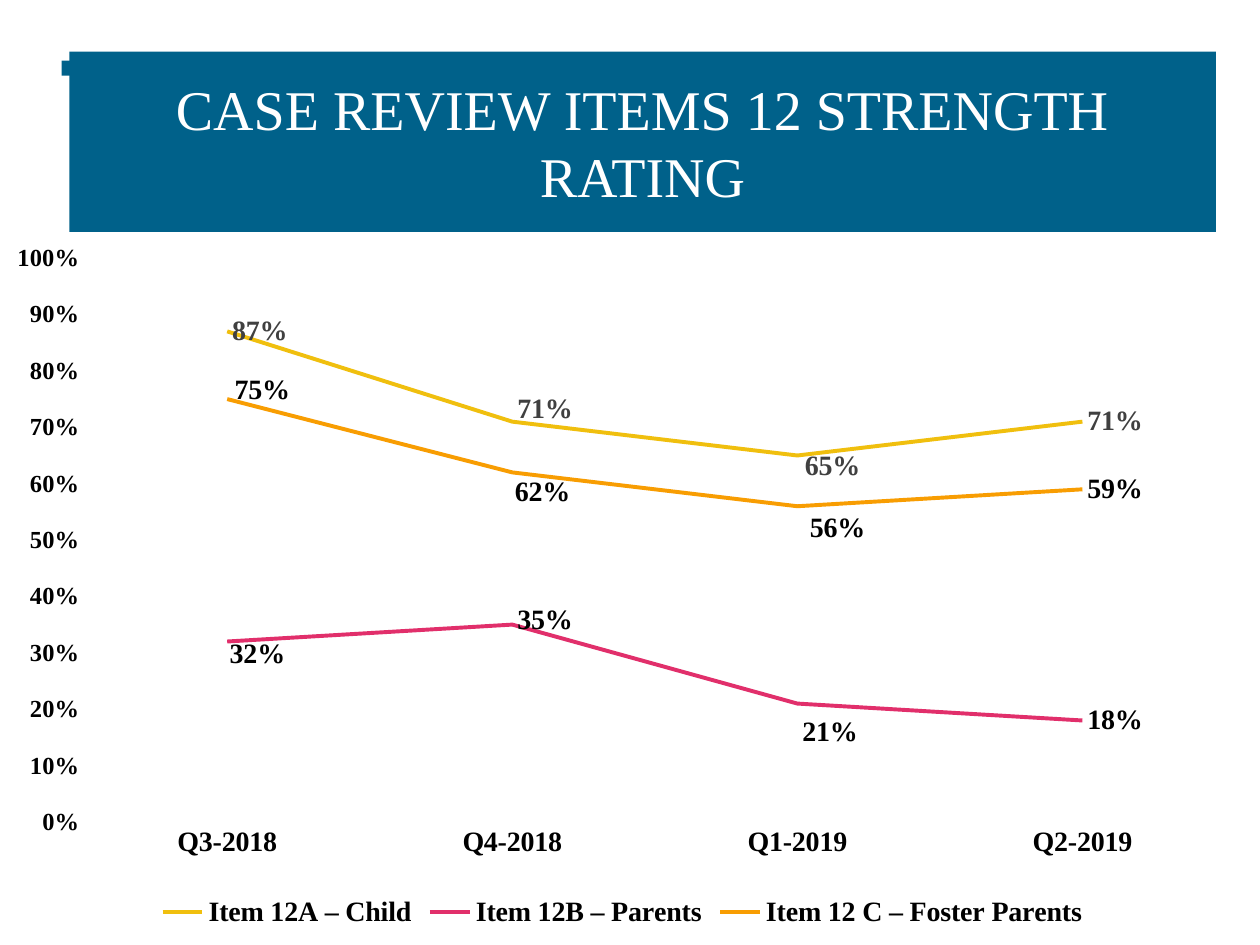
import lxml.etree
import pptx
import pptx.chart.data
import pptx.dml.color
import pptx.enum.chart
import pptx.enum.shapes
import pptx.enum.text
import pptx.oxml.ns
import pptx.util

Pt = pptx.util.Pt

THEME = {
    "font": "Times New Roman", "base_font": "Calibri",
    "banner": "00618A", "white": "FFFFFF", "black": "000000", "grey": "404040",
    "child": "F0BF0E", "parents": "E12F6B", "foster": "F89D02",
    "title_size": 32, "label_size": 16, "scale_size": 14, "base_size": 10,
    "line_width": 2.25,
}

TITLE = "CASE REVIEW ITEMS 12 STRENGTH RATING"
QUARTERS = ["Q3-2018", "Q4-2018", "Q1-2019", "Q2-2019"]
# Label offsets: point index -> (right, down) as fractions of the chart size.
SERIES = [
    {"name": "Item 12A – Child", "values": [0.87, 0.71, 0.65, 0.71],
     "color": "child", "label_color": "grey",
     "offsets": {1: (0, -0.017), 2: (0.002, 0.015)}},
    {"name": "Item 12B – Parents", "values": [0.32, 0.35, 0.21, 0.18],
     "color": "parents", "label_color": "black",
     "offsets": {0: (-0.002, 0.018), 1: (0, -0.006), 2: (0, 0.04)}},
    {"name": "Item 12 C – Foster Parents", "values": [0.75, 0.62, 0.56, 0.59],
     "color": "foster", "label_color": "black",
     "offsets": {0: (0.002, -0.012), 1: (-0.002, 0.028), 2: (0.006, 0.031)}},
]

ACCENT_BOX = (35.3, 34.6, 213.8, 8.6)
TITLE_BOX = (39.6, 29.5, 655.2, 103)
CHART_BOX = (0, 124.6, 711.4, 409)
PLOT_LAYOUT = {"layoutTarget": "inner", "xMode": "edge", "yMode": "edge",
               "x": 0.068, "y": 0.056, "w": 0.916, "h": 0.788}


def color(name):
    return pptx.dml.color.RGBColor.from_string(THEME[name])


def style_font(font, size, color_name="black", bold=True, name="font"):
    font.name = THEME[name]
    font.size = Pt(THEME[size])
    font.bold = bold
    font.color.rgb = color(color_name)


def add_banner(slide, box):
    shape = slide.shapes.add_shape(
        pptx.enum.shapes.MSO_SHAPE.RECTANGLE, *map(Pt, box))
    shape.shadow.inherit = False
    shape.fill.solid()
    shape.fill.fore_color.rgb = color("banner")
    shape.line.fill.background()
    return shape


def set_layout(parent, position, settings):
    """Give a chart element a manual layout as its child at the position."""
    tag = pptx.oxml.ns.qn
    for old_layout in parent.findall(tag("c:layout")):
        parent.remove(old_layout)
    layout = parent.makeelement(tag("c:layout"))
    parent.insert(position, layout)
    manual = lxml.etree.SubElement(layout, tag("c:manualLayout"))
    for key, value in settings.items():
        lxml.etree.SubElement(manual, tag(f"c:{key}")).set("val", str(value))


def style_axis(axis, size):
    axis.has_major_gridlines = False
    axis.major_tick_mark = pptx.enum.chart.XL_TICK_MARK.NONE
    axis.minor_tick_mark = pptx.enum.chart.XL_TICK_MARK.NONE
    axis.format.line.fill.background()
    style_font(axis.tick_labels.font, size)


def style_series(series, content):
    right = pptx.enum.chart.XL_LABEL_POSITION.RIGHT
    series.smooth = False
    series.marker.style = pptx.enum.chart.XL_MARKER_STYLE.NONE
    series.format.line.color.rgb = color(content["color"])
    series.format.line.width = Pt(THEME["line_width"])

    labels = series.data_labels
    labels.show_value = True
    labels.number_format = "0%"
    labels.number_format_is_linked = False
    labels.position = right
    style_font(labels.font, "label_size", content["label_color"])

    for index, (x, y) in content["offsets"].items():
        label = series.points[index].data_label
        label.position = right
        style_font(label.font, "label_size", content["label_color"])
        element = series._element.xpath(f"c:dLbls/c:dLbl[c:idx/@val='{index}']")[0]
        set_layout(element, 1, {"x": x, "y": y})


def add_line_chart(slide):
    data = pptx.chart.data.CategoryChartData(number_format="0%")
    data.categories = QUARTERS
    for content in SERIES:
        data.add_series(content["name"], content["values"])
    chart = slide.shapes.add_chart(
        pptx.enum.chart.XL_CHART_TYPE.LINE, *map(Pt, CHART_BOX), data).chart
    style_font(chart.font, "base_size", bold=False, name="base_font")
    chart.has_title = False
    chart.has_legend = True
    chart.legend.position = pptx.enum.chart.XL_LEGEND_POSITION.BOTTOM
    chart.legend.include_in_layout = False
    style_font(chart.legend.font, "label_size")

    style_axis(chart.category_axis, "label_size")
    value_axis = chart.value_axis
    style_axis(value_axis, "scale_size")
    value_axis.minimum_scale, value_axis.maximum_scale = 0, 1
    value_axis.major_unit = 0.1
    value_axis.tick_labels.number_format = "0%"
    value_axis.tick_labels.number_format_is_linked = False

    plot = chart.plots[0]
    plot.vary_by_categories = False
    for series, content in zip(plot.series, SERIES):
        style_series(series, content)
    set_layout(chart._chartSpace.xpath("c:chart/c:plotArea")[0], 0, PLOT_LAYOUT)


def add_title(slide):
    text_frame = add_banner(slide, TITLE_BOX).text_frame
    text_frame.word_wrap = True
    text_frame.vertical_anchor = pptx.enum.text.MSO_ANCHOR.MIDDLE
    text_frame.text = TITLE
    paragraph = text_frame.paragraphs[0]
    paragraph.alignment = pptx.enum.text.PP_ALIGN.CENTER
    style_font(paragraph.runs[0].font, "title_size", "white", bold=False)


def main():
    presentation = pptx.Presentation()
    presentation.slide_width, presentation.slide_height = Pt(720), Pt(540)
    slide = presentation.slides.add_slide(presentation.slide_layouts[6])
    add_banner(slide, ACCENT_BOX)
    add_line_chart(slide)
    add_title(slide)
    presentation.save("out.pptx")


if __name__ == "__main__":
    main()
